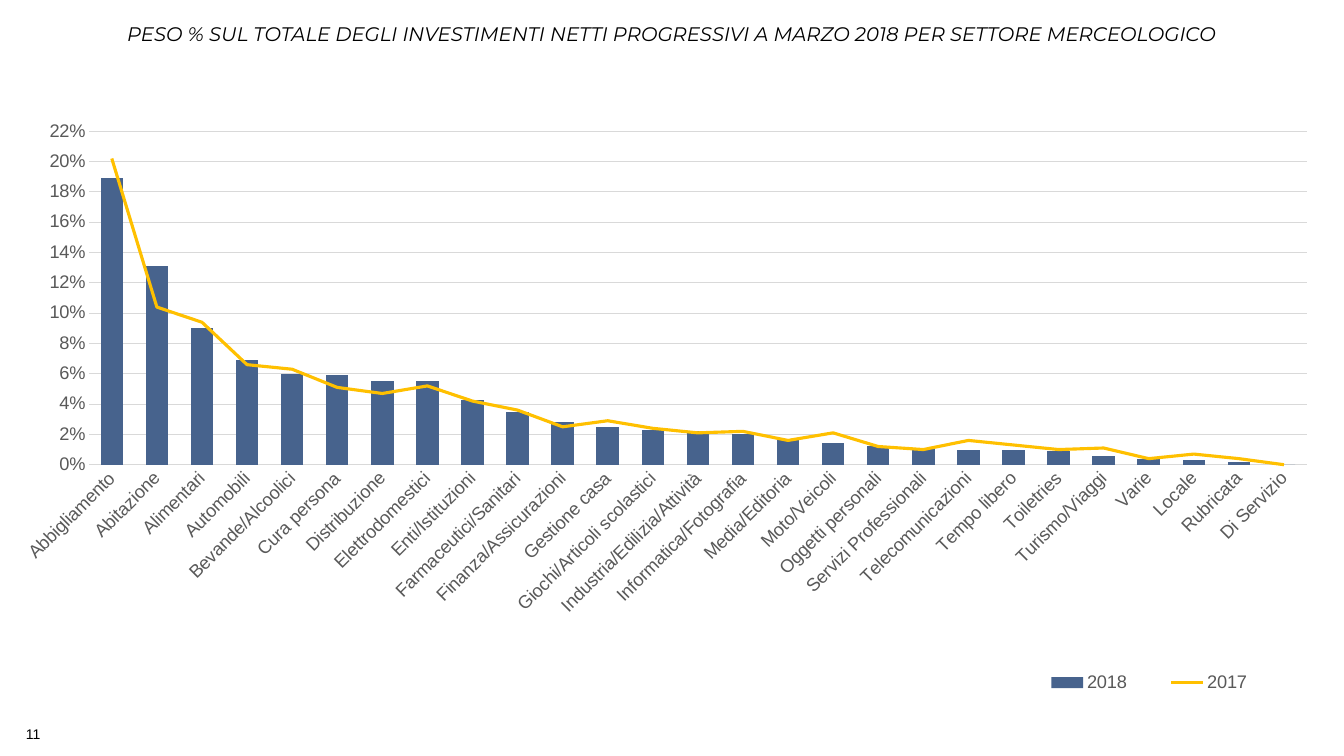
from dataclasses import dataclass

from lxml import etree
from pptx import Presentation
from pptx import util as u
from pptx.chart import data as cd
from pptx.dml.color import RGBColor
from pptx.enum import chart as ch
from pptx.enum import text
from pptx.oxml import parse_xml
from pptx.oxml.ns import nsdecls, qn


@dataclass(frozen=True)
class Theme:
    ink: RGBColor = RGBColor.from_string("000000")
    label: RGBColor = RGBColor.from_string("595959")
    grid: RGBColor = RGBColor.from_string("D9D9D9")
    bar: RGBColor = RGBColor.from_string("47638D")
    line: RGBColor = RGBColor.from_string("FFC000")
    title_font: str = "Montserrat"
    body_font: str = "Arial"
    title_size: float = 14
    chart_size: float = 13
    number_size: float = 10


THEME = Theme()

TITLE = ("PESO % SUL TOTALE DEGLI INVESTIMENTI NETTI PROGRESSIVI "
         "A MARZO 2018 PER SETTORE MERCEOLOGICO")

# sector, 2018 share, 2017 share
SHARES = [
    ("Abbigliamento", 0.189, 0.202),
    ("Abitazione", 0.131, 0.104),
    ("Alimentari", 0.09, 0.094),
    ("Automobili", 0.069, 0.066),
    ("Bevande/Alcoolici", 0.06, 0.063),
    ("Cura persona", 0.059, 0.051),
    ("Distribuzione", 0.055, 0.047),
    ("Elettrodomestici", 0.055, 0.052),
    ("Enti/Istituzioni", 0.043, 0.042),
    ("Farmaceutici/Sanitari", 0.035, 0.036),
    ("Finanza/Assicurazioni", 0.028, 0.025),
    ("Gestione casa", 0.025, 0.029),
    ("Giochi/Articoli scolastici", 0.023, 0.024),
    ("Industria/Edilizia/Attività", 0.022, 0.021),
    ("Informatica/Fotografia", 0.02, 0.022),
    ("Media/Editoria", 0.016, 0.016),
    ("Moto/Veicoli", 0.014, 0.021),
    ("Oggetti personali", 0.012, 0.012),
    ("Servizi Professionali", 0.011, 0.01),
    ("Telecomunicazioni", 0.01, 0.016),
    ("Tempo libero", 0.01, 0.013),
    ("Toiletries", 0.009, 0.01),
    ("Turismo/Viaggi", 0.006, 0.011),
    ("Varie", 0.004, 0.004),
    ("Locale", 0.003, 0.007),
    ("Rubricata", 0.002, 0.004),
    ("Di Servizio", 0, 0),
]


def set_font(font, name, size, color, italic=False):
    font.name = name
    font.size = u.Pt(size)
    font.color.rgb = color
    font.italic = italic


def set_line(line, color, width):
    line.color.rgb = color
    line.width = u.Pt(width)


def add_label(s, box, words, align, font, inset=None):
    """Add one line of text, centred vertically in the box."""
    tf = s.shapes.add_textbox(*map(u.Pt, box)).text_frame
    tf.word_wrap = True
    tf.vertical_anchor = text.MSO_ANCHOR.MIDDLE
    if inset is not None:
        tf.margin_left = tf.margin_right = u.Pt(inset)
        tf.margin_top = tf.margin_bottom = u.Pt(inset)
    p = tf.paragraphs[0]
    p.alignment = align
    r = p.add_run()
    r.text = words
    set_font(r.font, *font)


def manual_layout(x, y, w, h, inner=False):
    """Return a chart layout given in fractions of the chart area."""
    target = '<c:layoutTarget val="inner"/>' if inner else ""
    return parse_xml(
        f'<c:layout {nsdecls("c")}><c:manualLayout>{target}'
        '<c:xMode val="edge"/><c:yMode val="edge"/>'
        f'<c:x val="{x}"/><c:y val="{y}"/><c:w val="{w}"/><c:h val="{h}"/>'
        '</c:manualLayout></c:layout>')


def drop_layout(element):
    for layout in element.findall(qn("c:layout")):
        element.remove(layout)


def move_last_series_to_line(chart):
    """Turn the last column series into a line on the same axes."""
    columns = chart.plots[0]._element
    ser = columns.findall(qn("c:ser"))[-1]
    for invert in ser.findall(qn("c:invertIfNegative")):
        ser.remove(invert)
    lines = parse_xml(
        f'<c:lineChart {nsdecls("c")}><c:grouping val="standard"/>'
        '<c:varyColors val="0"/><c:marker val="1"/></c:lineChart>')
    lines.insert(2, ser)
    for ax in columns.findall(qn("c:axId")):
        etree.SubElement(lines, qn("c:axId")).set("val", ax.get("val"))
    columns.addnext(lines)


def style_axes(chart, font):
    cat, val = chart.category_axis, chart.value_axis
    for axis in (cat, val):
        axis.major_tick_mark = axis.minor_tick_mark = ch.XL_TICK_MARK.NONE
        set_font(axis.tick_labels.font, *font)
    cat.tick_labels.offset = 100
    cat._element.find(qn("c:txPr")).find(qn("a:bodyPr")).set("rot", "-2700000")
    set_line(cat.format.line, THEME.grid, 0.75)
    val.minimum_scale, val.maximum_scale, val.major_unit = 0, 0.22, 0.02
    val.tick_labels.number_format = "0%"
    val.tick_labels.number_format_is_linked = False
    val.format.line.fill.background()
    val.has_major_gridlines = True
    set_line(val.major_gridlines.format.line, THEME.grid, 0.75)


def add_share_chart(s, box):
    sectors, shares_2018, shares_2017 = zip(*SHARES)
    data = cd.CategoryChartData(number_format="0.0%")
    data.categories = sectors
    data.add_series("2018", shares_2018)
    data.add_series("2017", shares_2017)
    chart = s.shapes.add_chart(ch.XL_CHART_TYPE.COLUMN_CLUSTERED,
                               *map(u.Pt, box), data).chart
    label_font = (THEME.body_font, THEME.chart_size, THEME.label)
    set_font(chart.font, THEME.body_font, THEME.chart_size, THEME.ink)
    chart.has_title = False
    move_last_series_to_line(chart)

    columns, lines = chart.plots
    columns.vary_by_categories = False
    columns.gap_width = 100
    bars = columns.series[0].format
    bars.fill.solid()
    bars.fill.fore_color.rgb = THEME.bar
    trend = lines.series[0]
    trend.smooth = False
    trend.marker.style = ch.XL_MARKER_STYLE.NONE
    set_line(trend.format.line, THEME.line, 2.25)
    style_axes(chart, label_font)

    plot_area = columns._element.getparent()
    drop_layout(plot_area)
    plot_area.insert(0, manual_layout(0.05, 0.059, 0.936, 0.539, inner=True))

    chart.has_legend = True
    legend = chart.legend
    legend.position = ch.XL_LEGEND_POSITION.BOTTOM
    legend.include_in_layout = False
    set_font(legend.font, *label_font)
    drop_layout(legend._element)
    legend._element.find(qn("c:legendPos")).addnext(
        manual_layout(0.76, 0.92, 0.21, 0.06))


def build_chart_slide(prs, box):
    x, y, w, h = box
    s = prs.slides.add_slide(prs.slide_layouts[6])
    add_label(s, (x + 28, y + 6.5, w - 56, 34.5), TITLE, text.PP_ALIGN.CENTER,
              (THEME.title_font, THEME.title_size, THEME.ink, True), inset=0)
    add_label(s, (x - 9.4, y + h - 30.2, 45.4, 28.8), "11",
              text.PP_ALIGN.RIGHT,
              (THEME.body_font, THEME.number_size, THEME.ink))
    add_share_chart(s, (x + 17.3, y + 67.7, w - 31, h - 98))


def main():
    prs = Presentation()
    prs.slide_width, prs.slide_height = u.Pt(960), u.Pt(540)
    build_chart_slide(prs, (0, 0, 960, 540))
    prs.save("out.pptx")


if __name__ == "__main__":
    main()
